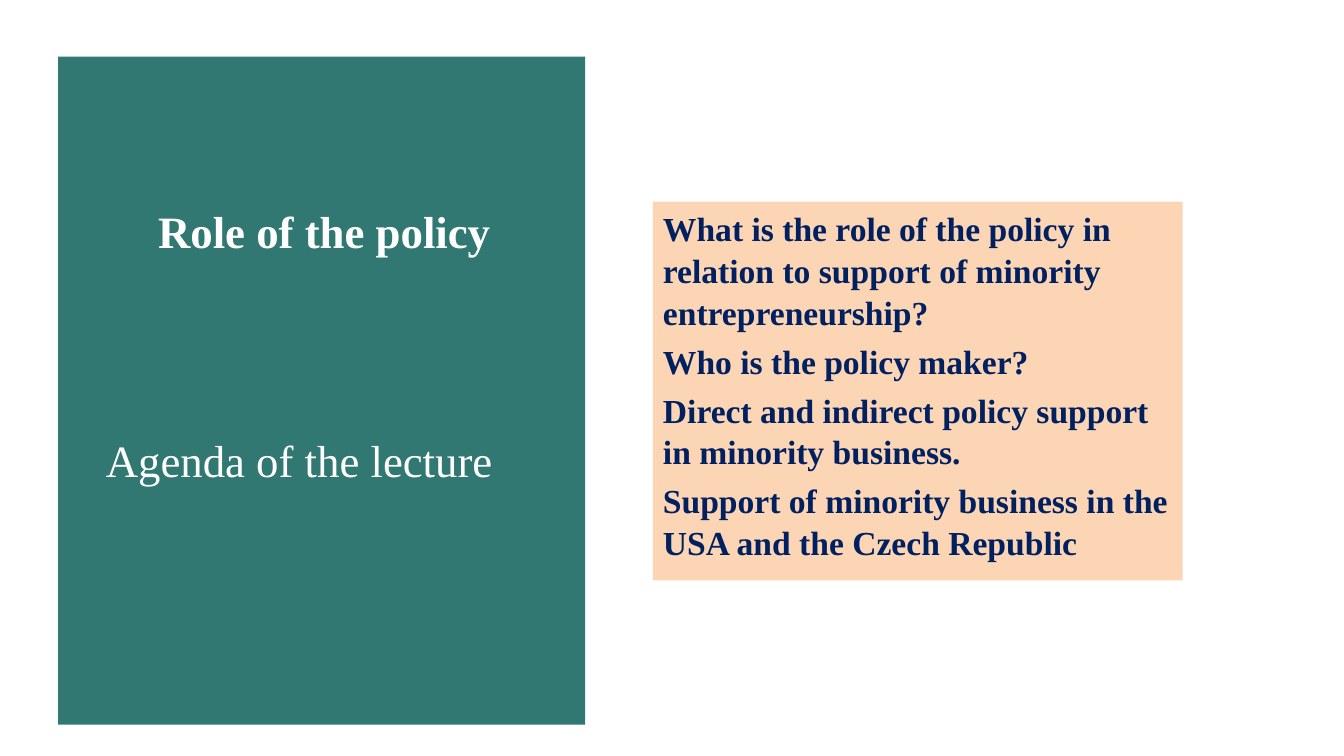
from dataclasses import dataclass

from pptx import Presentation
from pptx.dml.color import RGBColor
from pptx.enum.shapes import MSO_SHAPE
from pptx.enum.text import MSO_ANCHOR, MSO_AUTO_SIZE, PP_ALIGN
from pptx.util import Cm, Pt

RECTANGLE = MSO_SHAPE.RECTANGLE
TOP, MIDDLE = MSO_ANCHOR.TOP, MSO_ANCHOR.MIDDLE
LEFT, CENTER = PP_ALIGN.LEFT, PP_ALIGN.CENTER
NO_AUTOFIT = MSO_AUTO_SIZE.NONE
TITLE_ONLY = 5


@dataclass(frozen=True)
class Theme:
    font: str = "Times New Roman"
    panel: RGBColor = RGBColor(0x30, 0x78, 0x71)
    card: RGBColor = RGBColor(0xFC, 0xD5, 0xB5)
    light: RGBColor = RGBColor(0xFF, 0xFF, 0xFF)
    dark: RGBColor = RGBColor(0x00, 0x20, 0x60)
    heading_size: Pt = Pt(24)
    body_size: Pt = Pt(18)
    paragraph_gap: Pt = Pt(3.6)
    line_spacing: float = 1.04


THEME = Theme()

QUESTIONS = [
    "What is the role of the policy in relation to support of minority entrepreneurship?",
    "Who is the policy maker?",
    "Direct and indirect policy support in minority business.",
    "Support of minority business in the USA and the Czech Republic",
]


def add_rectangle(slide, box, color):
    shape = slide.shapes.add_shape(RECTANGLE, *box)
    shape.shadow.inherit = False
    shape.fill.solid()
    shape.fill.fore_color.rgb = color
    shape.line.fill.background()
    return shape


def write(shape, lines, size, color, bold=False, align=LEFT, anchor=TOP):
    """Fill the shape with one formatted paragraph for each line."""
    text_frame = shape.text_frame
    text_frame.text = "\n".join(lines)
    text_frame.word_wrap = True
    text_frame.auto_size = NO_AUTOFIT
    text_frame.vertical_anchor = anchor
    text_frame.margin_left = text_frame.margin_right = Cm(0.19)
    text_frame.margin_top = text_frame.margin_bottom = Cm(0.1)
    for paragraph in text_frame.paragraphs:
        paragraph.alignment = align
        for run in paragraph.runs:
            run.font.name = THEME.font
            run.font.size = size
            run.font.bold = bold
            run.font.color.rgb = color


def add_title_panel(slide, left, top, width, height):
    add_rectangle(slide, (left, top, width, height), THEME.panel)

    title = slide.shapes.title
    title.left, title.top = left + Cm(0.3), top + Cm(1.37)
    title.width, title.height = Cm(9.45), Cm(4.75)
    write(title, ["Role of the policy"], THEME.heading_size, THEME.light,
          bold=True, align=CENTER, anchor=MIDDLE)
    title.text_frame.margin_bottom = Cm(1.02)

    subtitle = slide.shapes.add_textbox(
        left + Cm(0.71), top + Cm(7.01), Cm(8.18), Cm(1.22))
    write(subtitle, ["Agenda of the lecture"], THEME.heading_size, THEME.light)


def add_question_card(slide, left, top, width, height):
    card = add_rectangle(slide, (left, top, width, height), THEME.card)
    write(card, QUESTIONS, THEME.body_size, THEME.dark, bold=True)
    for paragraph in card.text_frame.paragraphs:
        paragraph.space_before = THEME.paragraph_gap
        paragraph.line_spacing = THEME.line_spacing


def main():
    presentation = Presentation()
    presentation.slide_width = Cm(25.4)
    presentation.slide_height = Cm(14.29)
    slide = presentation.slides.add_slide(presentation.slide_layouts[TITLE_ONLY])
    add_title_panel(slide, Cm(1.1), Cm(1.07), Cm(9.96), Cm(12.63))
    add_question_card(slide, Cm(12.34), Cm(3.81), Cm(10.01), Cm(7.16))
    # The panel is drawn after the layout's title, so bring the title forward.
    slide.shapes.title.element.getparent().append(slide.shapes.title.element)
    presentation.save("out.pptx")


if __name__ == "__main__":
    main()
